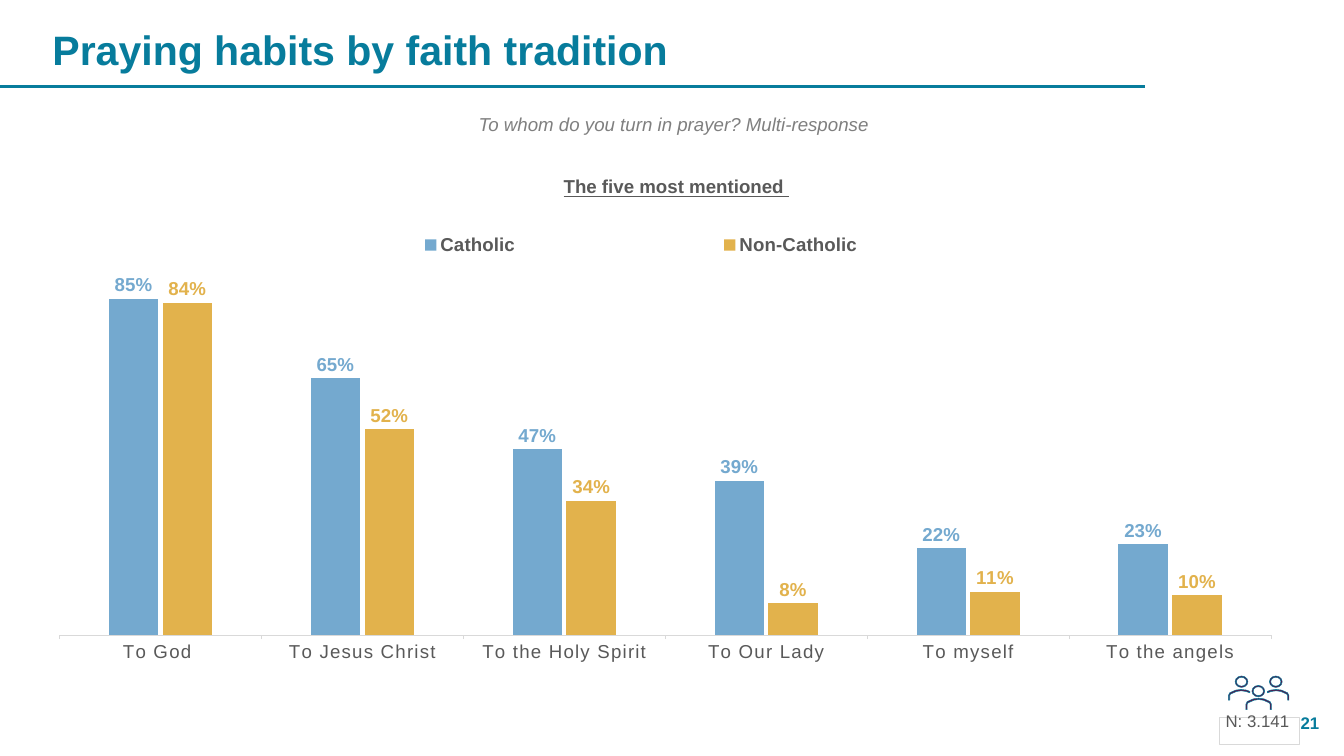
from dataclasses import dataclass

from lxml import etree
from pptx import Presentation
from pptx.chart.data import CategoryChartData
from pptx.dml.color import RGBColor
from pptx.enum.chart import XL_CHART_TYPE as ChartType
from pptx.enum.chart import XL_LABEL_POSITION as LabelPosition
from pptx.enum.chart import XL_LEGEND_POSITION as LegendPosition
from pptx.enum.chart import XL_TICK_MARK as TickMark
from pptx.enum.shapes import MSO_CONNECTOR as Connector
from pptx.enum.shapes import MSO_SHAPE as Shape
from pptx.enum.text import MSO_ANCHOR as Anchor
from pptx.enum.text import PP_ALIGN as Align
from pptx.oxml.ns import qn
from pptx.util import Inches, Pt


@dataclass(frozen=True)
class Theme:
    font: str = "Arial"
    teal: str = "077C9C"
    plum: str = "660039"
    text: str = "595959"
    muted: str = "7F7F7F"
    rule: str = "D9D9D9"
    white: str = "FFFFFF"
    catholic: str = "74A9CF"
    other: str = "E2B24C"
    title: int = 44
    body: int = 20
    small: int = 18


THEME = Theme()

CATEGORIES = ["To God ", "To Jesus Christ", "To the Holy Spirit",
              "To Our Lady", "To myself", "To the angels"]
SERIES = [
    ("Catholic", THEME.catholic, [0.85, 0.65, 0.47, 0.39, 0.22, 0.23]),
    ("Non-Catholic", THEME.other, [0.84, 0.52, 0.34, 0.08, 0.11, 0.10]),
]

ICON_CENTRE = 18.73
HEADS = [(18.38, 10.06), (18.89, 10.06), (18.63, 10.20)]
BACK_SHOULDER = [
    (18.60, 10.31), (18.60, 10.29), (18.55, 10.27), (18.47, 10.26), (18.39, 10.27),
    (18.30, 10.31), (18.28, 10.35), (18.28, 10.42), (18.30, 10.42), (18.30, 10.35),
    (18.31, 10.33), (18.40, 10.29), (18.47, 10.28), (18.54, 10.29),
]
FRONT_OUTER = [(18.54, 10.56), (18.54, 10.48), (18.56, 10.44), (18.65, 10.40), (18.73, 10.39)]
FRONT_INNER = [(18.73, 10.41), (18.66, 10.42), (18.57, 10.46), (18.56, 10.48), (18.56, 10.56)]


def rgb(value):
    return RGBColor.from_string(value)


def set_font(font, size, color, **styles):
    font.color.rgb = rgb(color)
    values = {"name": THEME.font, "size": Pt(size), "bold": False, **styles}
    for name, value in values.items():
        setattr(font, name, value)


def place(shape, left, top, width, height):
    values = {"left": left, "top": top, "width": width, "height": height}
    for name, value in values.items():
        setattr(shape, name, Inches(value))


def write(shape, text, size, color, align=Align.LEFT, anchor=Anchor.TOP, **styles):
    frame = shape.text_frame
    frame.word_wrap = True
    frame.vertical_anchor = anchor
    para = frame.paragraphs[0]
    para.alignment = align
    span = para.add_run()
    span.text = text
    set_font(span.font, size, color, **styles)


def add_title(page, text):
    title = page.shapes.title
    place(title, 0.68, 0.39, 15.15, 0.69)
    write(title, text, THEME.title, THEME.teal, anchor=Anchor.MIDDLE, bold=True)


def add_text(page, area, text, size, color, **options):
    box = page.shapes.add_textbox(*map(Inches, area))
    write(box, text, size, color, **options)


def add_rule(page, width, top):
    rule = page.shapes.add_connector(
        Connector.STRAIGHT, 0, Inches(top), Inches(width), Inches(top))
    rule.line.color.rgb = rgb(THEME.teal)
    rule.line.width = Pt(3)
    etree.SubElement(rule._element.spPr, qn("a:effectLst"))


def paint(shape, fill, line, width):
    shape.shadow.inherit = False
    shape.fill.solid()
    shape.fill.fore_color.rgb = rgb(fill)
    shape.line.color.rgb = rgb(line)
    shape.line.width = Pt(width)


def mirror(points):
    return [(2 * ICON_CENTRE - x, y) for x, y in points]


def add_people_icon(page):
    group = page.shapes.add_group_shape()
    front = (FRONT_OUTER + mirror(FRONT_OUTER[-2::-1])
             + mirror(FRONT_INNER[:0:-1]) + FRONT_INNER)
    parts = []
    for left, top in HEADS:
        head = group.shapes.add_shape(
            Shape.DONUT, *map(Inches, (left, top, 0.19, 0.17)))
        head.adjustments[0] = 0.11
        parts.append(head)
    for points in (BACK_SHOULDER, mirror(BACK_SHOULDER), front):
        start, *rest = [(Inches(x), Inches(y)) for x, y in points]
        outline = group.shapes.build_freeform(*start)
        outline.add_line_segments(rest, close=True)
        parts.append(outline.convert_to_shape())
    for part in parts:
        paint(part, THEME.plum, THEME.teal, 0.59)


def add_sample_size(page, text):
    box = page.shapes.add_shape(
        Shape.RECTANGLE, *map(Inches, (18.14, 10.68, 1.19, 0.4)))
    paint(box, THEME.white, THEME.rule, 0.5)
    write(box, text, THEME.small, THEME.text, anchor=Anchor.MIDDLE)
    box.text_frame.margin_top = 0
    box.text_frame.margin_bottom = Inches(0.3)


def make_layout(x, y, w, h, inner=False):
    """Build a manual chart layout from fractions of the chart area."""
    layout = etree.Element(qn("c:layout"))
    manual = etree.SubElement(layout, qn("c:manualLayout"))
    values = {"layoutTarget": "inner"} if inner else {}
    values |= {"xMode": "edge", "yMode": "edge", "x": x, "y": y, "w": w, "h": h}
    for name, value in values.items():
        etree.SubElement(manual, qn(f"c:{name}")).set("val", str(value))
    return layout


def drop_layout(parent):
    for old in parent.findall(qn("c:layout")):
        parent.remove(old)


def style_axes(chart):
    values = chart.value_axis
    values.minimum_scale, values.maximum_scale = 0, 0.9
    values.has_major_gridlines = False
    values.visible = False
    axis = chart.category_axis
    axis.major_tick_mark = TickMark.OUTSIDE
    axis.format.line.color.rgb = rgb(THEME.rule)
    axis.format.line.width = Pt(0.75)
    set_font(axis.tick_labels.font, THEME.body, THEME.text)
    axis.tick_labels.font._element.set("spc", "120")


def style_legend(chart):
    chart.has_legend = True
    legend = chart.legend
    legend.position = LegendPosition.TOP
    legend.include_in_layout = False
    set_font(legend.font, THEME.body, THEME.text, bold=True)
    drop_layout(legend._element)
    position = legend._element.find(qn("c:legendPos"))
    position.addnext(make_layout(0.16, 0.05, 0.66, 0.06))


def add_prayer_chart(page):
    data = CategoryChartData(number_format="0%")
    data.categories = CATEGORIES
    for name, _, values in SERIES:
        data.add_series(name, values)
    frame = page.shapes.add_chart(
        ChartType.COLUMN_CLUSTERED, *map(Inches, (0.28, 3.06, 18.9, 7.33)), data)
    chart = frame.chart
    chart.has_title = False
    set_font(chart.font, 10, "000000")
    style_axes(chart)
    style_legend(chart)
    plot = chart.plots[0]
    plot.gap_width, plot.overlap, plot.vary_by_categories = 200, -9, False
    for series, (_, color, _) in zip(plot.series, SERIES):
        series.format.fill.solid()
        series.format.fill.fore_color.rgb = rgb(color)
        labels = series.data_labels
        options = {"show_value": True, "number_format": "0%",
                   "number_format_is_linked": False,
                   "position": LabelPosition.OUTSIDE_END}
        for name, value in options.items():
            setattr(labels, name, value)
        set_font(labels.font, THEME.body, color, bold=True)
    area = chart._chartSpace.chart.plotArea
    drop_layout(area)
    area.insert(0, make_layout(0.032, 0.149, 0.954, 0.723, inner=True))


def main():
    deck = Presentation()
    deck.slide_width, deck.slide_height = Inches(20), Inches(11.25)
    page = deck.slides.add_slide(deck.slide_layouts[5])
    add_rule(page, 17.04, 1.29)
    add_prayer_chart(page)
    add_text(page, (17.4, 10.55, 2.33, 0.4), "21", THEME.small, THEME.teal,
             align=Align.RIGHT, anchor=Anchor.MIDDLE, bold=True)
    add_people_icon(page)
    add_sample_size(page, "N: 3.141")
    add_title(page, "Praying habits by faith tradition")
    add_text(page, (3.22, 1.63, 13.69, 0.44), "To whom do you turn in prayer? Multi-response ",
             THEME.body, THEME.muted, align=Align.CENTER, italic=True)
    add_text(page, (7.91, 2.56, 4.31, 0.44), "The five most mentioned ",
             THEME.body, THEME.text, align=Align.CENTER, bold=True, underline=True)
    deck.save("out.pptx")


if __name__ == "__main__":
    main()
